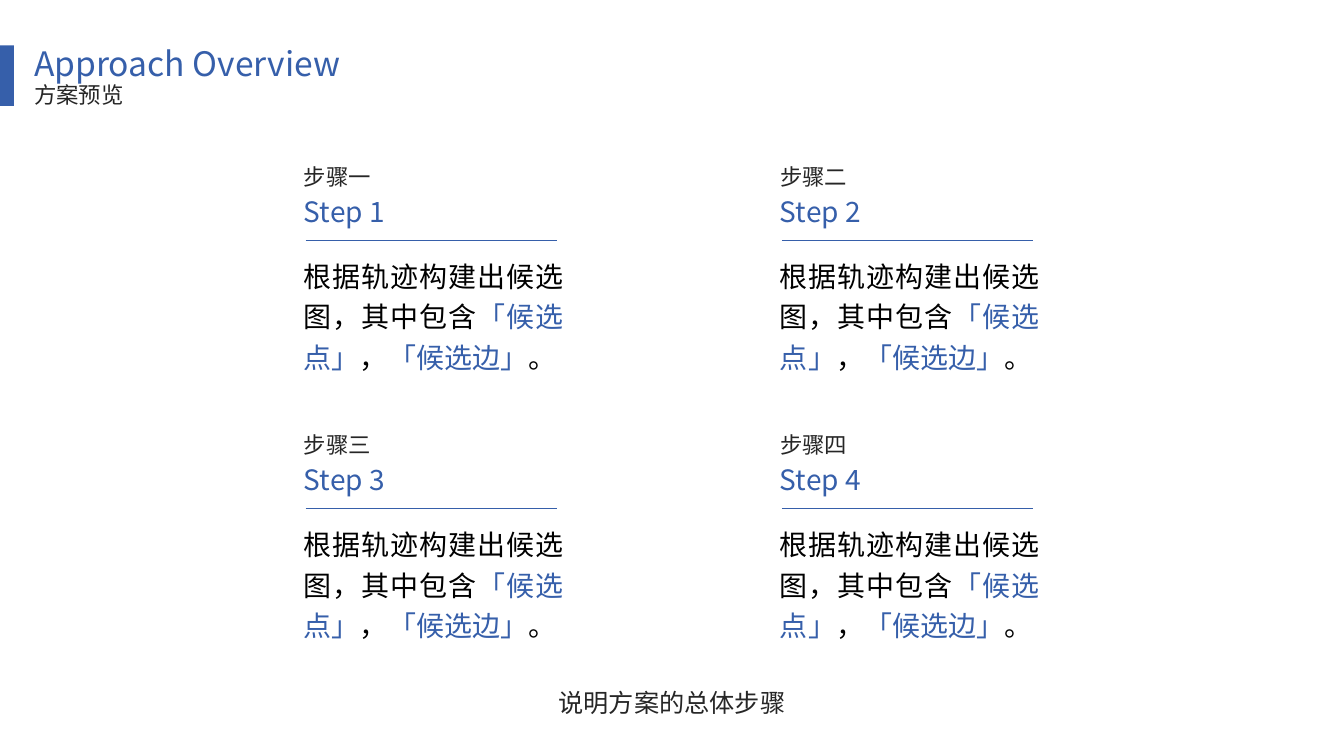
from lxml.etree import SubElement
from pptx import Presentation
from pptx.dml.color import RGBColor
from pptx.enum.shapes import MSO_CONNECTOR as CONN, MSO_SHAPE as SHAPE
from pptx.enum.text import MSO_ANCHOR as ANCHOR, MSO_AUTO_SIZE as FIT, PP_ALIGN as ALIGN
from pptx.oxml.ns import qn
from pptx.util import Inches, Pt

BLUE = RGBColor(0x36, 0x5F, 0xAA)
DARK = RGBColor(0x26, 0x26, 0x26)
BLACK = RGBColor(0, 0, 0)
FONT = "Noto Sans CJK SC"
COLS, ROWS = 160, 90

STEP_LEFT, STEP_TOP = 35, 18.84
STEP_DX, STEP_DY = 56.68, 31.92
NUMERALS = "一二三四"
BODY = [
    ("根据轨迹构建出候选图，其中包含", BLACK),
    ("「候选点」", BLUE),
    ("，", BLACK),
    ("「候选边」", BLUE),
    ("。", BLACK),
]


class Page:
    def __init__(self, prs):
        self.s = prs.slides.add_slide(prs.slide_layouts[6])
        self.col = prs.slide_width / COLS
        self.row = prs.slide_height / ROWS

    def place(self, x, y, w, h):
        return [round(v) for v in (x * self.col, y * self.row, w * self.col, h * self.row)]

    def bar(self, x, y, w, h):
        sp = self.s.shapes.add_shape(SHAPE.RECTANGLE, *self.place(x, y, w, h))
        sp.shadow.inherit = False
        sp.fill.solid()
        sp.fill.fore_color.rgb = BLUE
        sp.line.fill.background()

    def text(self, box, runs, size, color=None, parent=None, wrap=False, fit=FIT.SHAPE_TO_FIT_TEXT,
             anchor=ANCHOR.TOP, align=ALIGN.LEFT, spacing=None, before=None):
        sp = (parent or self.s).shapes.add_textbox(*self.place(*box))
        tf = sp.text_frame
        tf.word_wrap, tf.auto_size, tf.vertical_anchor = wrap, fit, anchor
        p = tf.paragraphs[0]
        p.alignment, p.line_spacing, p.space_before = align, spacing, before
        p.font.size, p.font.name = Pt(size), FONT
        SubElement(p.font._element, qn("a:ea"), typeface=FONT)
        if color is not None:
            p.font.color.rgb = color
        for words, run_color in runs:
            r = p.add_run()
            r.text = words
            if run_color is not None:
                r.font.color.rgb = run_color

    def heading(self, box, words, size, color, spacing):
        self.text(box, [(words, None)], size, color, wrap=True, fit=FIT.NONE,
                  anchor=ANCHOR.MIDDLE, spacing=spacing, before=Pt(10))

    def rule(self, x, y, w, parent):
        left, top, width, _ = self.place(x, y, w, 0)
        line = parent.shapes.add_connector(CONN.STRAIGHT, left, top, left + width, top)
        line.line.color.rgb = BLUE
        line.line.width = Pt(0.5)
        SubElement(line._element.spPr, qn("a:effectLst"))

    def step(self, x, y, number, numeral):
        group = self.s.shapes.add_group_shape()
        self.text((x, y + 3.72, 12.48, 5.28), [(f"Step {number}", None)], 20, BLUE, group)
        self.text((x, y, 10.56, 4.44), [(f"步骤{numeral}", None)], 16, DARK, group)
        self.rule(x + 1.4, y + 9.72, 29.95, group)
        self.text((x, y + 10.68, 33.24, 15.72), BODY, 20, parent=group, wrap=True,
                  align=ALIGN.JUSTIFY, spacing=1.2)


def main():
    prs = Presentation()
    prs.slide_width, prs.slide_height = Inches(13.333), Inches(7.5)
    page = Page(prs)
    page.bar(0, 5.4, 1.65, 7.2)
    page.heading((2.88, 5.16, 86, 5.52), "Approach Overview", 24, BLUE, 0.8)
    page.heading((2.88, 9.36, 86, 4.2), "方案预览", 16, DARK, 0.9)
    for i, numeral in enumerate(NUMERALS):
        row, col = divmod(i, 2)
        page.step(STEP_LEFT + col * STEP_DX, STEP_TOP + row * STEP_DY, i + 1, numeral)
    page.text((65.16, 81.24, 29.64, 4.8), [("说明方案的总体步骤", None)], 18, DARK,
              align=ALIGN.CENTER)
    prs.save("out.pptx")


if __name__ == "__main__":
    main()
